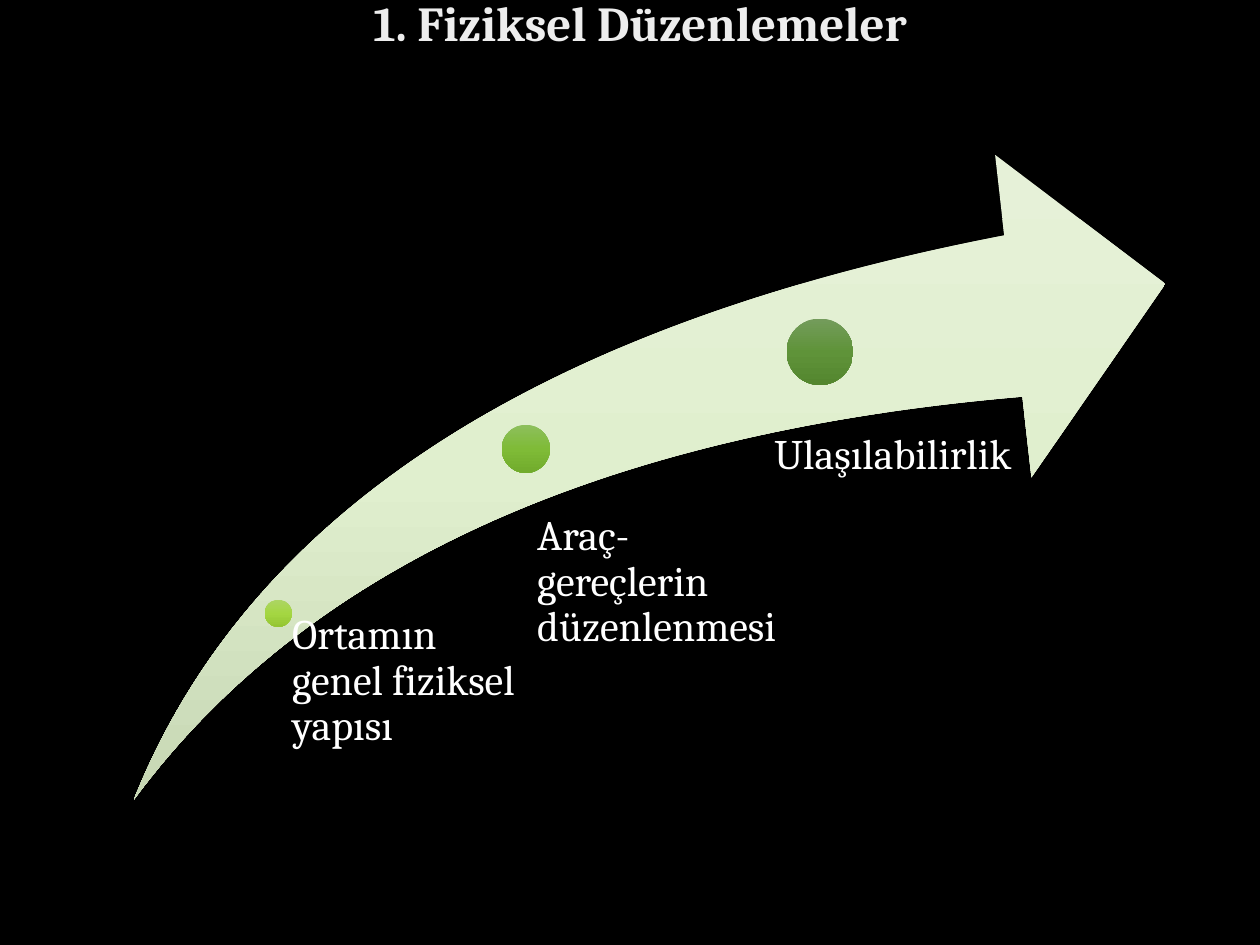
from copy import deepcopy

from pptx import Presentation
from pptx.dml.color import RGBColor
from pptx.enum import shapes, text
from pptx.oxml.ns import qn
from pptx.util import Pt

BLACK = RGBColor(0x00, 0x00, 0x00)
WHITE = RGBColor(0xFF, 0xFF, 0xFF)
SILVER = RGBColor(0xED, 0xED, 0xED)

# Gradients: top, middle, bottom
PALE = (RGBColor(0xE6, 0xF1, 0xD8), RGBColor(0xE0, 0xEF, 0xCE), RGBColor(0xC7, 0xD7, 0xB4))
LIME = (RGBColor(0xAC, 0xD5, 0x64), RGBColor(0xA4, 0xD6, 0x42), RGBColor(0x94, 0xC5, 0x33))
GREEN = (RGBColor(0x8D, 0xBF, 0x5C), RGBColor(0x7F, 0xBB, 0x37), RGBColor(0x71, 0xAB, 0x2C))
DARK = (RGBColor(0x74, 0x9C, 0x5C), RGBColor(0x5F, 0x93, 0x39), RGBColor(0x54, 0x86, 0x2F))


class Board:
    font = "Cambria"

    def __init__(self, slide):
        self.slide = slide
        fill = slide.background.fill
        fill.solid()
        fill.fore_color.rgb = BLACK

    def shape(self, kind, left, top, width, height, tones):
        item = self.slide.shapes.add_shape(kind, Pt(left), Pt(top), Pt(width), Pt(height))
        item.shadow.inherit = False
        item.line.fill.background()
        item.fill.gradient()
        item.fill.gradient_angle = 270
        # A new gradient has two stops; add a third
        stops = item._element.spPr.find(qn("a:gradFill")).find(qn("a:gsLst"))
        stops.append(deepcopy(stops[-1]))
        for i, (stop, tone) in enumerate(zip(item.fill.gradient_stops, tones)):
            stop.position = i / 2
            stop.color.rgb = tone
        return item

    def arrow(self, left, top, width, height, tones):
        item = self.shape(shapes.MSO_SHAPE.SWOOSH_ARROW, left, top, width, height, tones)
        item.adjustments[0] = item.adjustments[1] = 0.25

    def dot(self, x, y, size, tones):
        self.shape(shapes.MSO_SHAPE.OVAL, x - size / 2, y - size / 2, size, size, tones)

    def label(self, words, left, top, width, height, inset=0, size=24, color=WHITE,
              bold=False, align=text.PP_ALIGN.LEFT, anchor=text.MSO_ANCHOR.TOP):
        frame = self.slide.shapes.add_textbox(Pt(left), Pt(top), Pt(width), Pt(height)).text_frame
        frame.word_wrap = True
        frame.vertical_anchor = anchor
        frame.margin_left = Pt(inset)
        frame.margin_top = frame.margin_right = frame.margin_bottom = 0
        frame.text = words
        para = frame.paragraphs[0]
        para.alignment = align
        para.line_spacing = 0.9
        font = para.runs[0].font
        font.name, font.size, font.bold = self.font, Pt(size), bold
        font.color.rgb = color


def main():
    deck = Presentation()
    deck.slide_width, deck.slide_height = Pt(720), Pt(540)
    board = Board(deck.slides.add_slide(deck.slide_layouts[6]))

    # Title
    board.label("1. Fiziksel Düzenlemeler", 42.5, 0, 646.5, 29, size=27.9, color=SILVER,
                bold=True, align=text.PP_ALIGN.CENTER, anchor=text.MSO_ANCHOR.MIDDLE)

    # Rising arrow
    board.arrow(76.5, 88.5, 589.5, 368.5, PALE)

    # Steps: dot (centre, size, tones) and label (words, box, inset)
    steps = [
        ((159, 350.5, 15.5, LIME),
         ("Ortamın genel fiziksel yapısı", 159, 350.5, 137.5, 106.5, 8)),
        ((300.5, 256.5, 27.5, GREEN),
         ("Araç-gereçlerin düzenlenmesi", 292.5, 294, 158.5, 163, 14.5)),
        ((468.5, 201, 38, DARK),
         ("Ulaşılabilirlik", 422.5, 247.5, 175.5, 84, 20)),
    ]
    for dot, label in steps:
        board.dot(*dot)
        board.label(*label)

    deck.save("out.pptx")


if __name__ == "__main__":
    main()
